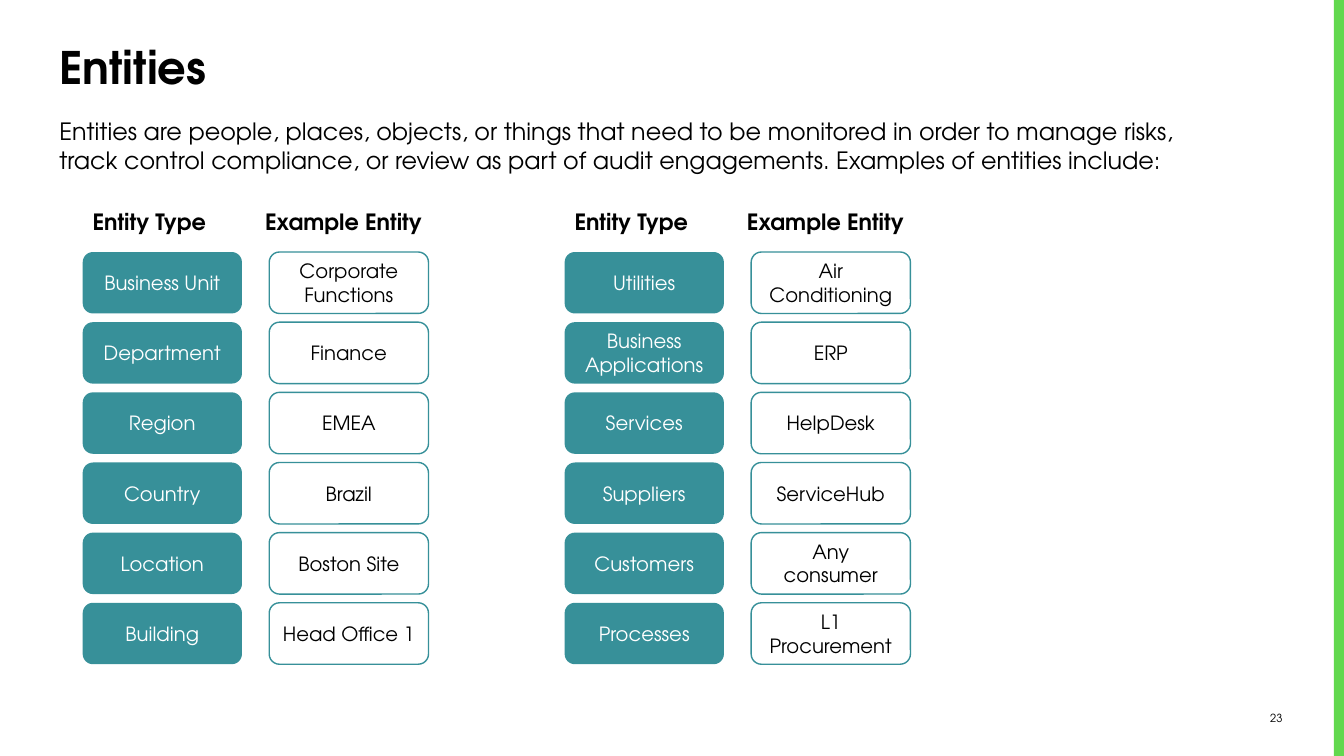
from pptx import Presentation
from pptx.dml.color import RGBColor
from pptx.enum.shapes import MSO_SHAPE
from pptx.enum.text import MSO_ANCHOR, PP_ALIGN
from pptx.util import Inches, Pt

RECT, ROUNDED = MSO_SHAPE.RECTANGLE, MSO_SHAPE.ROUNDED_RECTANGLE
TOP, MIDDLE = MSO_ANCHOR.TOP, MSO_ANCHOR.MIDDLE
LEFT, CENTER, RIGHT = PP_ALIGN.LEFT, PP_ALIGN.CENTER, PP_ALIGN.RIGHT

FONT = "TeX Gyre Adventor"
TEAL, GREEN, WHITE, BLACK = "379099", "62D84E", "FFFFFF", "000000"
CELL_W, CELL_H = 1.58, 0.61
EXAMPLE_OFFSET = 1.85

INTRO = ("Entities are people, places, objects, or things that need to be monitored "
         "in order to manage risks, track control compliance, or review as part of "
         "audit engagements. Examples of entities include:")

# Left edge, then (entity type, example) rows
GROUPS = [
    (0.82, [("Business Unit", "Corporate Functions"), ("Department", "Finance"),
            ("Region", "EMEA"), ("Country", "Brazil"),
            ("Location", "Boston Site"), ("Building", "Head Office 1")]),
    (5.6, [("Utilities", "Air Conditioning"), ("Business Applications", "ERP"),
           ("Services", "HelpDesk"), ("Suppliers", "ServiceHub"),
           ("Customers", "Any consumer"), ("Processes", "L1 Procurement")]),
]


def rgb(color):
    return RGBColor.from_string(color)


def write(frame, text, size=14, color=BLACK, bold=False, align=LEFT, anchor=TOP):
    frame.word_wrap = True
    frame.vertical_anchor = anchor
    paragraph = frame.paragraphs[0]
    paragraph.alignment = align
    run = paragraph.add_run()
    run.text = text
    run.font.name = FONT
    run.font.size = Pt(size)
    run.font.bold = bold
    run.font.color.rgb = rgb(color)


def add_label(slide, box, text, **style):
    label = slide.shapes.add_textbox(*map(Inches, box))
    write(label.text_frame, text, **style)


def add_block(slide, kind, box, fill, line=None):
    block = slide.shapes.add_shape(kind, *map(Inches, box))
    block.shadow.inherit = False
    block.fill.solid()
    block.fill.fore_color.rgb = rgb(fill)
    if line:
        block.line.color.rgb = rgb(line)
        block.line.width = Pt(1)
    else:
        block.line.fill.background()
    return block


def add_cell(slide, box, text, fill, color, line=None):
    cell = add_block(slide, ROUNDED, box, fill, line)
    write(cell.text_frame, text, color=color, align=CENTER, anchor=MIDDLE)


def add_entity_group(slide, box, rows):
    left, top, _, height = box
    example_left = left + EXAMPLE_OFFSET
    # Column headings
    add_label(slide, (left, top, 1.57, 0.52), "Entity Type", size=16, bold=True)
    add_label(slide, (example_left - 0.14, top, 1.82, 0.52), "Example Entity",
              size=16, bold=True)
    # Rows of type and example, spread evenly down to the bottom of the box
    first_row = top + 0.48
    pitch = (top + height - CELL_H - first_row) / (len(rows) - 1)
    for index, (entity_type, example) in enumerate(rows):
        row_top = first_row + index * pitch
        add_cell(slide, (left, row_top, CELL_W, CELL_H), entity_type, TEAL, WHITE)
        add_cell(slide, (example_left, row_top, CELL_W, CELL_H), example,
                 WHITE, BLACK, line=TEAL)


def add_header(slide, box):
    left, top, width, _ = box
    add_label(slide, (left, top, width, 0.77), "Entities", size=32, bold=True)
    add_label(slide, (left, top + 0.77, 11.71, 0.67), INTRO, size=17)


def add_page_frame(slide, box):
    left, top, width, height = box
    # Green edge and page number
    add_block(slide, RECT, (left + width - 0.1, top, 0.1, height), GREEN)
    add_label(slide, (left + width - 1.24, top + height - 0.49, 0.73, 0.25), "23",
              size=8, align=RIGHT)


def main():
    prs = Presentation()
    prs.slide_width, prs.slide_height = Inches(13.33), Inches(7.5)
    slide = prs.slides.add_slide(prs.slide_layouts[6])
    add_page_frame(slide, (0, 0, 13.33, 7.5))
    add_header(slide, (0.49, 0.34, 12.24, 1.44))
    for left, rows in GROUPS:
        add_entity_group(slide, (left, 2.02, EXAMPLE_OFFSET + CELL_W, 4.57), rows)
    prs.save("out.pptx")


if __name__ == "__main__":
    main()
